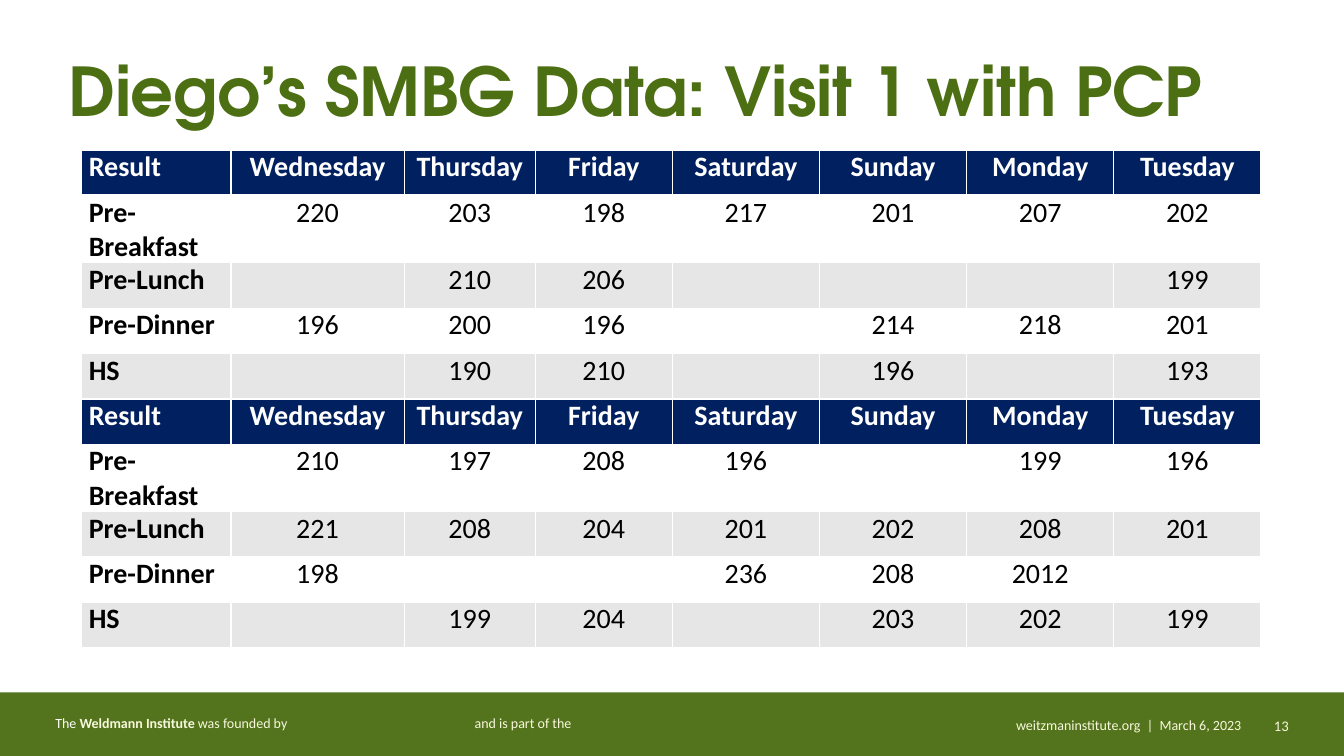
from dataclasses import dataclass
from typing import Any

from lxml import etree
from pptx import Presentation
from pptx import util as u
from pptx.dml.color import RGBColor
from pptx.enum import shapes, text
from pptx.oxml import ns

WIDTH, HEIGHT = u.Inches(13.33), u.Inches(7.5)
WHITE, CREAM, BLACK = "FFFFFF", "F8F8DC", "000000"
GREEN, TITLE_GREEN, NAVY, GREY = "53741D", "4D6F13", "002060", "E7E6E6"
LEFT, CENTER, RIGHT = text.PP_ALIGN.LEFT, text.PP_ALIGN.CENTER, text.PP_ALIGN.RIGHT
COLUMN_SHARES = [11.1, 12.9, 9.75, 10.2] + [10.95] * 4
ROW_SHARE = 6
HEADER = ["Result", "Wednesday", "Thursday", "Friday", "Saturday", "Sunday", "Monday", "Tuesday"]
MEALS = ["Pre-Breakfast", "Pre-Lunch", "Pre-Dinner", "HS"]
WEEKS = [
    [
        ["220", "203", "198", "217", "201", "207", "202"],
        ["", "210", "206", "", "", "", "199"],
        ["196", "200", "196", "", "214", "218", "201"],
        ["", "190", "210", "", "196", "", "193"],
    ],
    [
        ["210", "197", "208", "196", "", "199", "196"],
        ["221", "208", "204", "201", "202", "208", "201"],
        ["198", "", "", "236", "208", "2012", ""],
        ["", "199", "204", "", "203", "202", "199"],
    ],
]


@dataclass(frozen=True)
class Area:
    left: float
    top: float
    width: float
    height: float

    def box(self) -> tuple[int, int, int, int]:
        return across(self.left), down(self.top), across(self.width), down(self.height)


@dataclass(frozen=True)
class Run:
    words: str
    color: str = CREAM
    bold: bool = False


@dataclass(frozen=True)
class FooterText:
    area: Area
    runs: tuple[Run, ...]
    size: float = 10
    align: Any = RIGHT
    tab: float = 0


FOOTER = [
    FooterText(
        Area(3.38, 93.87, 59.94, 3.6),
        (Run("The ", WHITE), Run("Weldmann Institute ", bold=True),
         Run("was founded by\tand is part of the")),
        align=LEFT,
        tab=31.2,
    ),
    FooterText(Area(73.59, 94.13, 19.5, 3.47), (Run("weitzmaninstitute.org  |  March 6, 2023"),)),
    FooterText(Area(89.27, 94.13, 7.35, 4.8), (Run("13"),), size=10.5),
]


def across(share: float) -> int:
    return u.Emu(round(WIDTH * share / 100))


def down(share: float) -> int:
    return u.Emu(round(HEIGHT * share / 100))


def rgb(value: str) -> RGBColor:
    return RGBColor.from_string(value)


def apply(target: Any, values: dict[str, Any]) -> None:
    for name, value in values.items():
        setattr(target, name, value)


def add_run(p: Any, run: Run, size: float, font: str = "Calibri") -> Any:
    r = p.add_run()
    r.text = run.words
    apply(r.font, {"name": font, "size": u.Pt(size), "bold": run.bold})
    r.font.color.rgb = rgb(run.color)
    return r


def add_bar(slide: Any) -> None:
    sp = slide.shapes.add_shape(shapes.MSO_SHAPE.RECTANGLE, *Area(0, 91.6, 100, 8.4).box())
    sp.shadow.inherit = False
    sp.fill.solid()
    sp.fill.fore_color.rgb = rgb(GREEN)
    sp.line.fill.background()


def add_footer_text(slide: Any, item: FooterText) -> None:
    tf = slide.shapes.add_textbox(*item.area.box()).text_frame
    tf.word_wrap = True
    p = tf.paragraphs[0]
    p.alignment = item.align
    if item.tab:
        tabs = etree.SubElement(p._p.get_or_add_pPr(), ns.qn("a:tabLst"))
        etree.SubElement(tabs, ns.qn("a:tab"), pos=str(across(item.tab)), algn="l")
    for run in item.runs:
        add_run(p, run, item.size)


def set_title(slide: Any) -> None:
    sp = slide.shapes.title
    apply(sp, dict(zip(("left", "top", "width", "height"), Area(3.08, 5.33, 94.07, 14.4).box())))
    tf = sp.text_frame
    apply(tf, {
        "word_wrap": True,
        "auto_size": text.MSO_AUTO_SIZE.NONE,
        "vertical_anchor": text.MSO_ANCHOR.MIDDLE,
        "margin_left": across(2),
    })
    p = tf.paragraphs[0]
    apply(p, {"alignment": LEFT, "line_spacing": 0.9})
    run = Run("Diego’s SMBG Data: Visit 1 with PCP", TITLE_GREEN, True)
    r = add_run(p, run, 48, "TeX Gyre Adventor")
    r._r.get_or_add_rPr().set("spc", "-20")


def set_borders(cell: Any, bottom: float) -> None:
    tc_pr = cell._tc.get_or_add_tcPr()
    for side, points in {"L": 1, "R": 1, "T": 1, "B": bottom}.items():
        line = etree.SubElement(tc_pr, ns.qn(f"a:ln{side}"), w=str(u.Pt(points)))
        fill = etree.SubElement(line, ns.qn("a:solidFill"))
        etree.SubElement(fill, ns.qn("a:srgbClr"), val=WHITE)


def fill_cell(cell: Any, words: str, row: int, column: int) -> None:
    row_in_week = row % (len(MEALS) + 1)
    is_header = row_in_week == 0
    set_borders(cell, 3 if row == 0 else 1)
    cell.fill.solid()
    cell.fill.fore_color.rgb = rgb(NAVY if is_header else WHITE if row_in_week % 2 else GREY)
    apply(cell, {
        "margin_left": u.Inches(0.07),
        "margin_right": u.Inches(0.07),
        "margin_top": 0,
        "margin_bottom": 0,
    })
    p = cell.text_frame.paragraphs[0]
    p.alignment = CENTER if column else LEFT
    if words:
        add_run(p, Run(words, WHITE if is_header else BLACK, is_header or column == 0), 20)


def add_readings(slide: Any) -> None:
    rows = []
    for week in WEEKS:
        rows.append(HEADER)
        rows.extend([meal, *values] for meal, values in zip(MEALS, week))
    area = Area(6.08, 19.87, sum(COLUMN_SHARES), ROW_SHARE * len(rows))
    table = slide.shapes.add_table(len(rows), len(HEADER), *area.box()).table
    apply(table, {"first_row": False, "horz_banding": False})
    for column, share in zip(table.columns, COLUMN_SHARES):
        column.width = across(share)
    for i, values in enumerate(rows):
        table.rows[i].height = down(ROW_SHARE)
        for j, words in enumerate(values):
            fill_cell(table.cell(i, j), words, i, j)


def main() -> None:
    prs = Presentation()
    apply(prs, {"slide_width": WIDTH, "slide_height": HEIGHT})
    slide = prs.slides.add_slide(prs.slide_layouts[5])
    add_bar(slide)
    for item in FOOTER:
        add_footer_text(slide, item)
    set_title(slide)
    add_readings(slide)
    prs.save("out.pptx")


if __name__ == "__main__":
    main()
